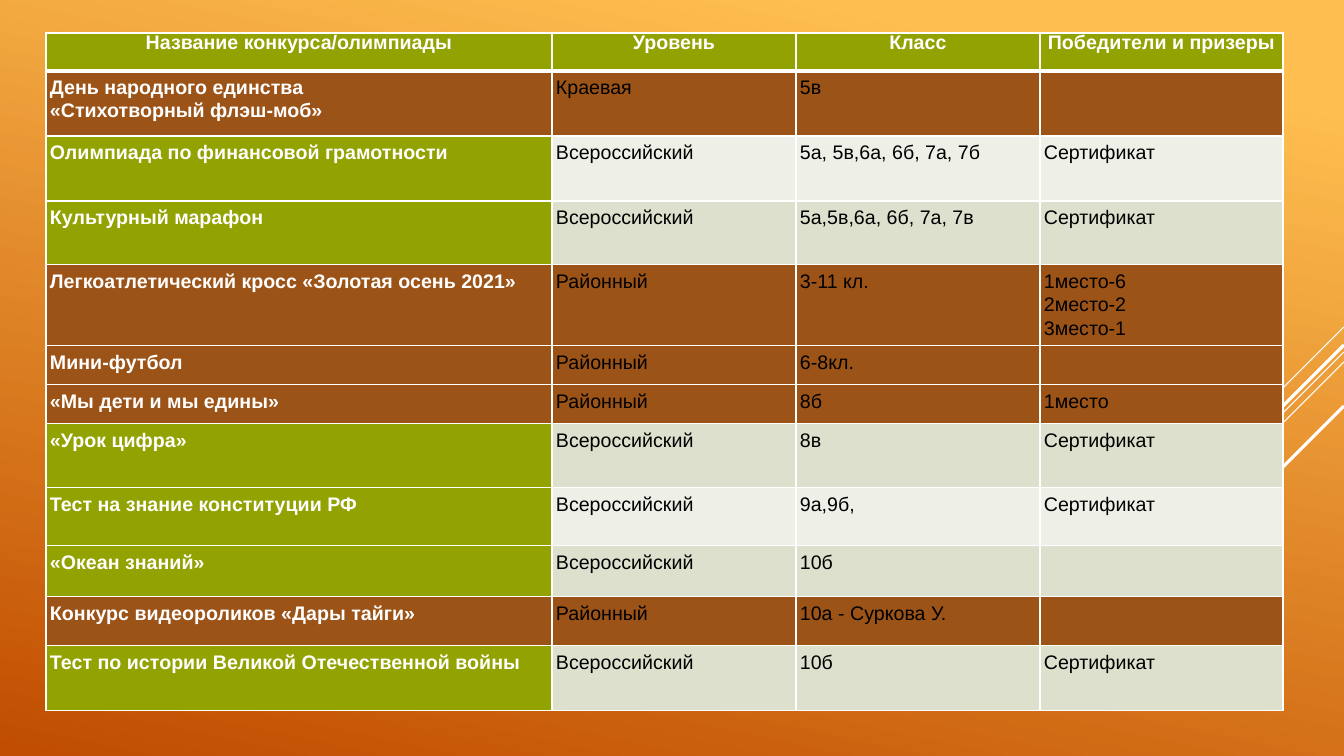
from lxml import etree
from pptx import Presentation
from pptx.dml.color import RGBColor
from pptx.enum.shapes import MSO_CONNECTOR
from pptx.enum.text import PP_ALIGN
from pptx.oxml.ns import qn
from pptx.util import Pt

STRAIGHT = MSO_CONNECTOR.STRAIGHT
CENTER = PP_ALIGN.CENTER

WHITE, BLACK = "FFFFFF", "000000"
GREEN, BROWN, LIGHT, SAGE = "92A200", "9C5317", "EEF0E7", "DCE0CC"
GRADIENT = [(0.1, "FFBF50"), (1, "C04D00")]
FONT, SIZE = "Arial", 14

WIDTH, HEIGHT = 1344, 756
TABLE_LEFT, TABLE_TOP = 46, 33
COLUMNS = [506, 244, 244, 243]
DIAGONALS = [(327, 101, 0.75), (352, 329, 0.75), (362, 209, 0.75),
             (345, 193, 2.25), (406, 140, 2.25)]

HEADER = ("Название конкурса/олимпиады", "Уровень", "Класс", "Победители и призеры")
ROWS = [
    (38, GREEN, GREEN, HEADER),
    (65, BROWN, BROWN, ("День народного единства\n«Стихотворный флэш-моб»", "Краевая", "5в", "")),
    (65, GREEN, LIGHT, ("Олимпиада по финансовой грамотности", "Всероссийский",
                        "5а, 5в,6а, 6б, 7а, 7б", "Сертификат")),
    (64, GREEN, SAGE, ("Культурный марафон", "Всероссийский", "5а,5в,6а, 6б, 7а, 7в", "Сертификат")),
    (81, BROWN, BROWN, ("Легкоатлетический кросс «Золотая осень 2021»", "Районный",
                        "3-11 кл.", "1место-6\n2место-2\n3место-1")),
    (39, BROWN, BROWN, ("Мини-футбол", "Районный", "6-8кл.", "")),
    (39, BROWN, BROWN, ("«Мы дети и мы едины»", "Районный", "8б", "1место")),
    (64, GREEN, SAGE, ("«Урок цифра»", "Всероссийский", "8в", "Сертификат")),
    (58, GREEN, LIGHT, ("Тест на знание конституции РФ", "Всероссийский", "9а,9б,", "Сертификат")),
    (51, GREEN, SAGE, ("«Океан знаний»", "Всероссийский", "10б", "")),
    (49, BROWN, BROWN, ("Конкурс видеороликов «Дары тайги»", "Районный", "10а - Суркова У.", "")),
    (65, GREEN, SAGE, ("Тест по истории Великой Отечественной войны", "Всероссийский",
                       "10б", "Сертификат")),
]


def px(n):
    return round(n * 914400 / 100.8)


def color(value):
    return RGBColor.from_string(value)


def set_borders(cell, widths):
    tcPr = cell._tc.get_or_add_tcPr()
    for i, (side, width) in enumerate(widths.items()):
        ln = etree.Element(qn("a:ln" + side), w=str(Pt(width)))
        fill = etree.SubElement(ln, qn("a:solidFill"))
        etree.SubElement(fill, qn("a:srgbClr"), val=WHITE)
        tcPr.insert(i, ln)


def fill_cell(cell, text, row, col, fill):
    is_header = row == 0
    is_strong = is_header or col == 0
    cell.fill.solid()
    cell.fill.fore_color.rgb = color(fill)
    margin = px(3 if is_header else 4)
    cell.margin_left = cell.margin_right = margin
    cell.margin_top = cell.margin_bottom = margin
    cell.text_frame.text = text
    for p in cell.text_frame.paragraphs:
        p.font.name = FONT
        p.font.size = Pt(SIZE)
        p.font.bold = is_strong
        p.font.color.rgb = color(WHITE if is_strong else BLACK)
        p.line_spacing = Pt(12.8) if is_header else 1.07
        if is_header:
            p.alignment = CENTER
            p.space_after = Pt(7.5)
    set_borders(cell, {"L": 1, "R": 1, "T": 3 if row == 1 else 1, "B": 3 if is_header else 1})


def add_background(s):
    fill = s.background.fill
    fill.gradient()
    fill.gradient_angle = 258
    for stop, (position, value) in zip(fill.gradient_stops, GRADIENT):
        stop.position = position
        stop.color.rgb = color(value)


def add_diagonals(s):
    for top, length, width in DIAGONALS:
        line = s.shapes.add_connector(STRAIGHT, px(WIDTH), px(top),
                                      px(WIDTH - length), px(top + length))
        line.line.color.rgb = color(WHITE)
        line.line.width = Pt(width)
        etree.SubElement(line._element.spPr, qn("a:effectLst"))


def add_contest_table(s):
    heights = [row[0] for row in ROWS]
    table = s.shapes.add_table(len(ROWS), len(COLUMNS), px(TABLE_LEFT), px(TABLE_TOP),
                               px(sum(COLUMNS)), px(sum(heights))).table
    table.horz_banding = False
    for column, width in zip(table.columns, COLUMNS):
        column.width = px(width)
    for i, (height, first_fill, fill, texts) in enumerate(ROWS):
        table.rows[i].height = px(height)
        for j, text in enumerate(texts):
            fill_cell(table.cell(i, j), text, i, j, fill if j else first_fill)


def main():
    prs = Presentation()
    prs.slide_width, prs.slide_height = px(WIDTH), px(HEIGHT)
    s = prs.slides.add_slide(prs.slide_layouts[6])
    add_background(s)
    add_diagonals(s)
    add_contest_table(s)
    prs.save("out.pptx")


if __name__ == "__main__":
    main()
